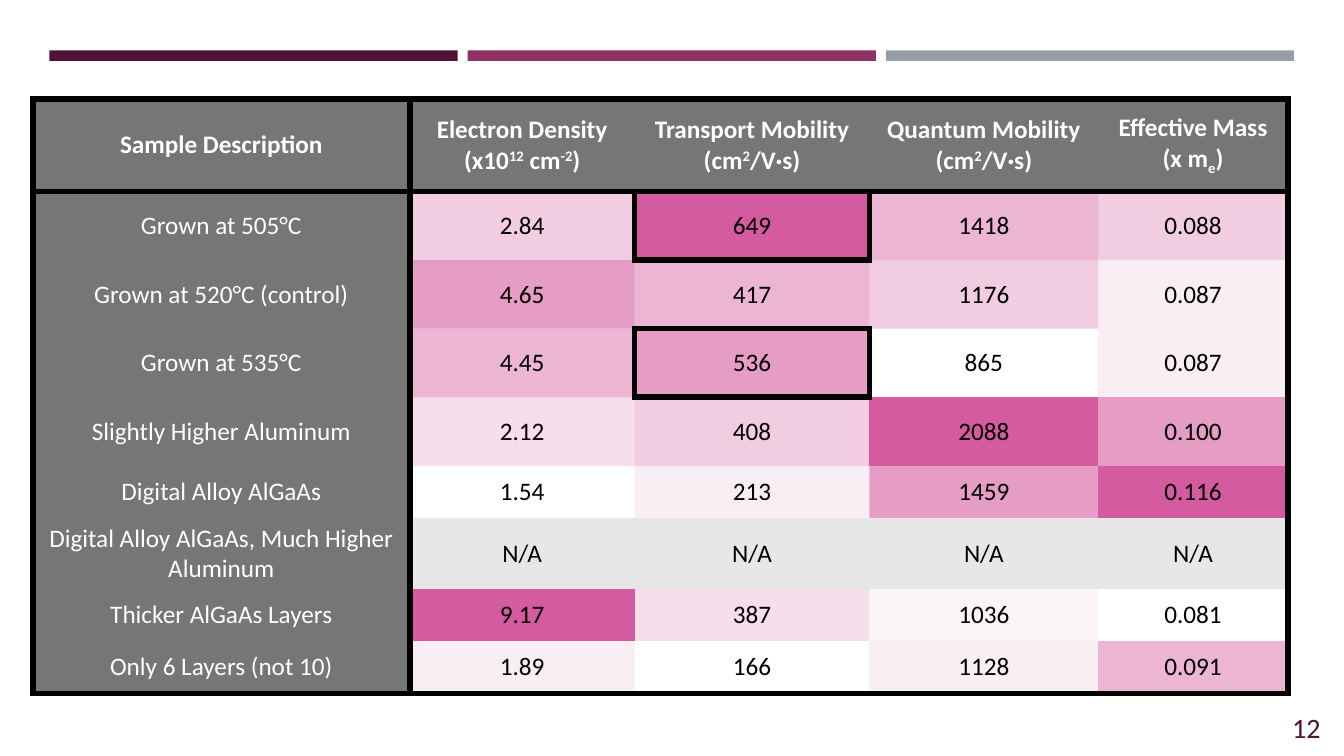
from lxml import etree
from pptx import Presentation
from pptx.dml.color import RGBColor
from pptx.enum.shapes import MSO_SHAPE
from pptx.enum.text import MSO_ANCHOR, PP_ALIGN
from pptx.oxml.ns import qn
from pptx.util import Pt

RECTANGLE = MSO_SHAPE.RECTANGLE
MIDDLE = MSO_ANCHOR.MIDDLE
CENTER, RIGHT = PP_ALIGN.CENTER, PP_ALIGN.RIGHT

THEME = {
    "font": "Calibri", "table_size": 18, "number_size": 20, "border_width": 4.5,
    "plum": "4D1434", "berry": "903163", "steel": "969FA7",
    "label": "767676", "missing": "E7E7E7", "heat": "D45B9F", "pale_heat": "DFA0C1",
    "white": "FFFFFF", "black": "000000",
}

SUPER, SUB = 30000, -25000
HEADERS = [
    [[("Sample Description", 0)]],
    [[("Electron Density (x10", 0), ("12", SUPER), (" cm", 0), ("-2", SUPER), (")", 0)]],
    [[("Transport Mobility (cm", 0), ("2", SUPER), ("/V·s)", 0)]],
    [[("Quantum Mobility (cm", 0), ("2", SUPER), ("/V·s)", 0)]],
    [[("Effective Mass", 0)], [("(x m", 0), ("e", SUB), (")", 0)]],
]
SAMPLES = [
    ("Grown at 505°C", ["2.84", "649", "1418", "0.088"], [30, 100, 45, 30]),
    ("Grown at 520°C (control)", ["4.65", "417", "1176", "0.087"], [60, 45, 30, 10]),
    ("Grown at 535°C", ["4.45", "536", "865", "0.087"], [45, 60, 0, 10]),
    ("Slightly Higher Aluminum", ["2.12", "408", "2088", "0.100"], [20, 30, 100, 60]),
    ("Digital Alloy AlGaAs", ["1.54", "213", "1459", "0.116"], [0, 10, 60, 100]),
    ("Digital Alloy AlGaAs, Much Higher Aluminum", ["N/A"] * 4, [None] * 4),
    ("Thicker AlGaAs Layers", ["9.17", "387", "1036", "0.081"], [100, 20, 10, 0]),
    ("Only 6 Layers (not 10)", ["1.89", "166", "1128", "0.091"], [10, 0, 10, 45]),
]
PALE_VALUE = "1036"
BOXED = {(1, 2), (3, 2)}
COLUMN_WIDTHS = [269.3, 160.6, 167.8, 163.4, 135.4]
ROW_HEIGHTS = [66.2, 49, 49, 49, 49, 37.4, 46, 37.4, 37.4]
LAST_ROW, LAST_COLUMN = len(ROW_HEIGHTS) - 1, len(COLUMN_WIDTHS) - 1


def write_text(frame, paragraphs, size, color, align, bold=False):
    for index, pieces in enumerate(paragraphs):
        paragraph = frame.paragraphs[0] if index == 0 else frame.add_paragraph()
        paragraph.alignment = align
        for text, baseline in pieces:
            run = paragraph.add_run()
            run.text = text
            run.font.name = THEME["font"]
            run.font.size = Pt(size)
            run.font.bold = bold
            run.font.color.rgb = RGBColor.from_string(THEME[color])
            if baseline:
                run.font._element.set("baseline", str(baseline))


def style_cell(cell, edges, color, opacity):
    properties = cell._tc.get_or_add_tcPr()
    for side, drawn in edges.items():
        line = etree.SubElement(properties, qn(f"a:ln{side}"))
        if drawn:
            line.set("w", str(Pt(THEME["border_width"])))
            paint = etree.SubElement(line, qn("a:solidFill"))
            etree.SubElement(paint, qn("a:srgbClr")).set("val", THEME["black"])
        else:
            etree.SubElement(line, qn("a:noFill"))
    cell.fill.solid()
    cell.fill.fore_color.rgb = RGBColor.from_string(THEME[color])
    if opacity < 100:
        fill_color = properties.find(qn("a:solidFill")).find(qn("a:srgbClr"))
        etree.SubElement(fill_color, qn("a:alpha")).set("val", str(opacity * 1000))


presentation = Presentation()
presentation.slide_width, presentation.slide_height = Pt(960), Pt(540)
slide = presentation.slides.add_slide(presentation.slide_layouts[6])

for index, color in enumerate(["plum", "berry", "steel"]):
    band = slide.shapes.add_shape(
        RECTANGLE, Pt(35.3 + index * 298.8), Pt(36), Pt(291.6), Pt(7.5))
    band.shadow.inherit = False
    band.fill.solid()
    band.fill.fore_color.rgb = RGBColor.from_string(THEME[color])
    band.line.fill.background()

page_number = slide.shapes.add_textbox(Pt(734.4), Pt(505.4), Pt(216), Pt(28.8)).text_frame
page_number.word_wrap = True
page_number.vertical_anchor = MIDDLE
write_text(page_number, [[("12", 0)]], THEME["number_size"], "plum", RIGHT)

results = slide.shapes.add_table(
    len(ROW_HEIGHTS), len(COLUMN_WIDTHS), Pt(23.4), Pt(70.6),
    Pt(sum(COLUMN_WIDTHS)), Pt(sum(ROW_HEIGHTS))).table
results.first_row = False
results.horz_banding = False
for column, width in zip(results.columns, COLUMN_WIDTHS):
    column.width = Pt(width)
for row, height in zip(results.rows, ROW_HEIGHTS):
    row.height = Pt(height)

contents = [HEADERS] + [
    [[[(text, 0)]] for text in [label, *values]] for label, values, _ in SAMPLES]

for r, row_contents in enumerate(contents):
    for c, paragraphs in enumerate(row_contents):
        cell = results.cell(r, c)
        cell.vertical_anchor = MIDDLE
        is_label = r == 0 or c == 0
        color, opacity = "label", 100
        if not is_label:
            shade = SAMPLES[r - 1][2][c - 1]
            if shade is None:
                color = "missing"
            elif shade == 0:
                color = "white"
            else:
                pale = SAMPLES[r - 1][1][c - 1] == PALE_VALUE
                color, opacity = ("pale_heat" if pale else "heat"), shade
        edges = {
            "L": c <= 1 or BOXED & {(r, c), (r, c - 1)},
            "R": c in (0, LAST_COLUMN) or BOXED & {(r, c), (r, c + 1)},
            "T": r <= 1 or BOXED & {(r, c), (r - 1, c)},
            "B": r in (0, LAST_ROW) or BOXED & {(r, c), (r + 1, c)},
        }
        style_cell(cell, edges, color, opacity)
        write_text(cell.text_frame, paragraphs, THEME["table_size"],
                   "white" if is_label else "black", CENTER, bold=r == 0)

presentation.save("out.pptx")
